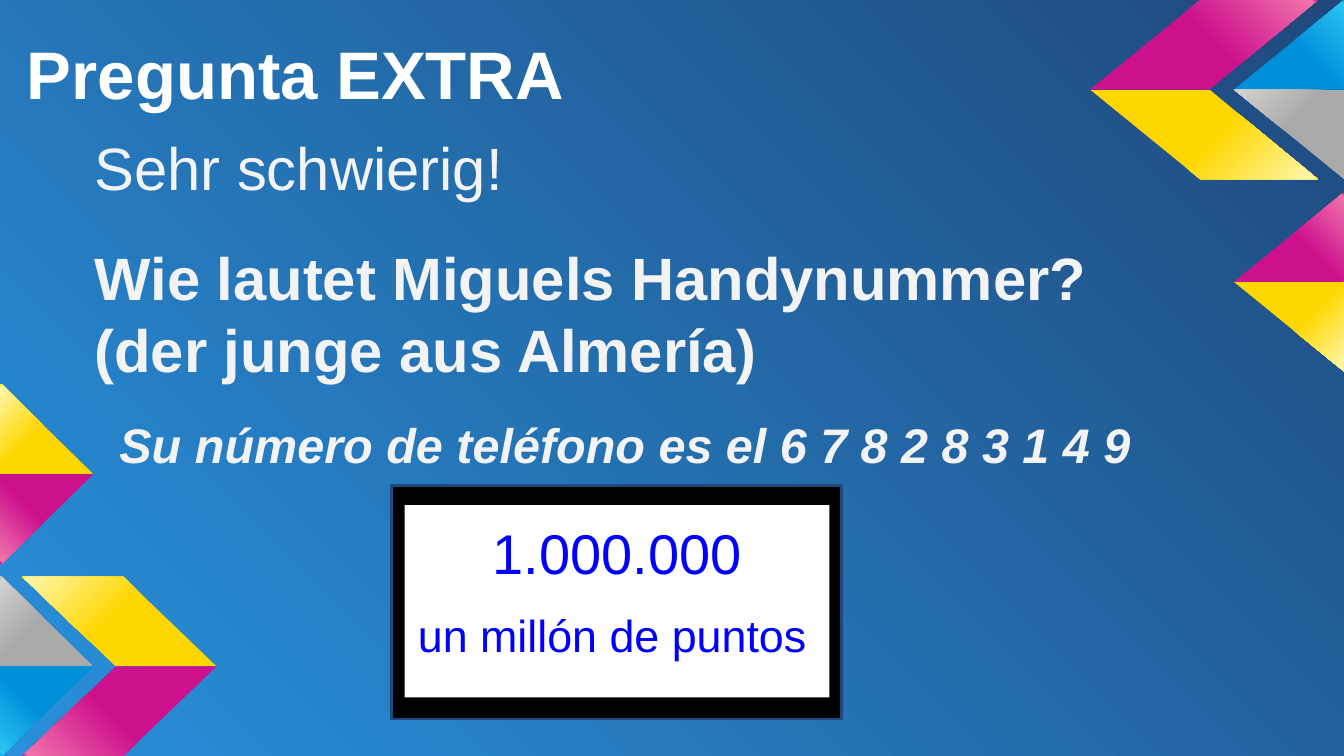
from dataclasses import dataclass

from lxml import etree
from pptx import Presentation
from pptx.dml.color import RGBColor
from pptx.enum.shapes import MSO_SHAPE
from pptx.enum.text import MSO_ANCHOR, MSO_AUTO_SIZE, PP_ALIGN
from pptx.oxml.ns import qn
from pptx.util import Pt

RECTANGLE = MSO_SHAPE.RECTANGLE
TOP, BOTTOM = MSO_ANCHOR.TOP, MSO_ANCHOR.BOTTOM
LEFT, CENTER = PP_ALIGN.LEFT, PP_ALIGN.CENTER
NO_AUTOFIT = MSO_AUTO_SIZE.NONE


@dataclass(frozen=True)
class Theme:
    font: str = "Arial"
    title_size: int = 36
    question_size: int = 32
    points_size: int = 30
    answer_size: int = 26
    caption_size: int = 24
    white: str = "FFFFFF"
    black: str = "000000"
    pale: str = "F3F3F3"
    blue: str = "0000FF"
    navy: str = "1F497D"
    sky: str = "2890DA"
    cyan_ribbon: tuple = ("0090DA", "2BC4F3", "00AEEE")
    gray_ribbon: tuple = ("AAAAAA", "D2D2D2", "B9B9B9")
    yellow_ribbon: tuple = ("FFD700", "FFF7A9", "FFF100")
    magenta_ribbon: tuple = ("CD118C", "F074AC", "EB008B")


class SlideBuilder:
    def __init__(self, slide, theme):
        self.slide = slide
        self.theme = theme

    def gradient(self, fill, stops):
        fill.gradient()
        stop_list = fill._fill._gradFill.find(qn("a:gsLst"))
        for stop in list(stop_list):
            stop_list.remove(stop)
        for position, color in stops:
            stop = etree.SubElement(stop_list, qn("a:gs"), pos=str(position * 1000))
            etree.SubElement(stop, qn("a:srgbClr"), val=color)
        return stop_list.getparent()

    def background(self):
        stops = [(0, self.theme.sky), (100, self.theme.navy)]
        gradient = self.gradient(self.slide.background.fill, stops)
        gradient.remove(gradient.find(qn("a:lin")))
        circle = etree.SubElement(gradient, qn("a:path"), attrib={"path": "circle"})
        etree.SubElement(circle, qn("a:fillToRect"), t="100000", r="100000")

    def ribbon(self, points, colors, angle):
        builder = self.slide.shapes.build_freeform(*points[0], scale=Pt(1))
        builder.add_line_segments(points[1:], close=True)
        shape = builder.convert_to_shape()
        shape.shadow.inherit = False
        shape.line.fill.background()
        base, light, end = colors
        gradient = self.gradient(
            shape.fill, [(0, base), (54, base), (98, light), (100, end)]
        )
        gradient.find(qn("a:lin")).set("ang", str(angle * 60000))

    def chevron(self, axis, outline, upper, lower):
        for direction, (colors, angle) in ((-1, upper), (1, lower)):
            points = [(x, axis + direction * offset) for x, offset in outline]
            self.ribbon(points, colors, angle)

    def rectangle(self, box, color, line=None):
        shape = self.slide.shapes.add_shape(RECTANGLE, *map(Pt, box))
        shape.shadow.inherit = False
        shape.fill.solid()
        shape.fill.fore_color.rgb = RGBColor.from_string(color)
        if line:
            shape.line.color.rgb = RGBColor.from_string(line)
            shape.line.width = Pt(1.5)
        else:
            shape.line.fill.background()
        return shape

    def set_text(self, shape, lines, color, anchor=TOP, bold=False, italic=False,
                 indent=0, space_after=0):
        frame = shape.text_frame
        frame.word_wrap = True
        frame.auto_size = NO_AUTOFIT
        frame.vertical_anchor = anchor
        frame.margin_left = frame.margin_right = Pt(7.2)
        frame.margin_top = frame.margin_bottom = Pt(7.2)
        frame.text = "\n".join(text for text, size, alignment in lines)
        for paragraph, (text, size, alignment) in zip(frame.paragraphs, lines):
            paragraph.alignment = alignment
            paragraph.space_before = Pt(0)
            paragraph.space_after = Pt(space_after)
            paragraph.font.name = self.theme.font
            paragraph.font.size = Pt(size)
            paragraph.font.bold = bold
            paragraph.font.italic = italic
            paragraph.font.color.rgb = RGBColor.from_string(color)
            properties = paragraph._p.get_or_add_pPr()
            properties.set("marL", str(Pt(indent)))
            properties.set("indent", "0")
            properties.insert_element_before(
                etree.Element(qn("a:buNone")), "a:tabLst", "a:defRPr", "a:extLst"
            )

    def placeholder(self, shape, box, lines, color, **style):
        shape.left, shape.top, shape.width, shape.height = map(Pt, box)
        self.set_text(shape, lines, color, **style)

    def text_box(self, box, lines, color, **style):
        shape = self.slide.shapes.add_textbox(*map(Pt, box))
        self.set_text(shape, lines, color, **style)


def main():
    presentation = Presentation()
    presentation.slide_width, presentation.slide_height = Pt(720), Pt(405)
    slide = presentation.slides.add_slide(presentation.slide_layouts[1])
    theme = Theme()
    builder = SlideBuilder(slide, theme)
    builder.background()

    cyan, gray = theme.cyan_ribbon, theme.gray_ribbon
    yellow, magenta = theme.yellow_ribbon, theme.magenta_ribbon
    left_tip = [(50, 0), (0, 0), (0, 48), (1, 48)]
    left_band = [(62, 0), (12, 48), (66, 48), (116, 0)]
    right_tip = [(661, 0), (720, 48), (720, 0)]
    right_band = [(584, 0), (643, 48), (706.5, 48), (647.5, 0)]
    builder.chevron(357, left_tip, (gray, 225), (cyan, 135))
    builder.chevron(254, left_tip, (yellow, 225), (magenta, 135))
    builder.chevron(357, left_band, (yellow, 225), (magenta, 135))
    builder.chevron(48, right_tip, (cyan, 315), (gray, 225))
    builder.chevron(48, right_band, (magenta, 315), (yellow, 45))
    builder.chevron(151, right_tip, (magenta, 315), (yellow, 45))

    builder.placeholder(
        slide.shapes.title, (7.2, 0, 541.5, 67.5),
        [("Pregunta EXTRA", theme.title_size, LEFT)],
        theme.white, anchor=BOTTOM, bold=True,
    )
    builder.rectangle((209.8, 260.2, 241, 125), theme.black, theme.navy)
    score = builder.rectangle((216.8, 270.6, 227.6, 103), theme.white)
    builder.set_text(
        score,
        [("1.000.000", theme.points_size, CENTER),
         ("un millón de puntos", theme.caption_size, LEFT)],
        theme.blue, space_after=12,
    )
    builder.placeholder(
        slide.placeholders[1], (41.5, 121.7, 598.3, 134),
        [("Wie lautet Miguels Handynummer?", theme.question_size, LEFT),
         ("(der junge aus Almería)", theme.question_size, LEFT)],
        theme.pale, bold=True, indent=2,
    )
    builder.text_box(
        (56.9, 215.3, 567.4, 134),
        [("Su número de teléfono es el 6 7 8 2 8 3 1 4 9", theme.answer_size, LEFT)],
        theme.pale, bold=True, italic=True,
    )
    builder.text_box(
        (41.5, 62.6, 598.3, 134),
        [("Sehr schwierig!", theme.question_size, LEFT)],
        theme.pale, indent=2,
    )
    presentation.save("out.pptx")


if __name__ == "__main__":
    main()
